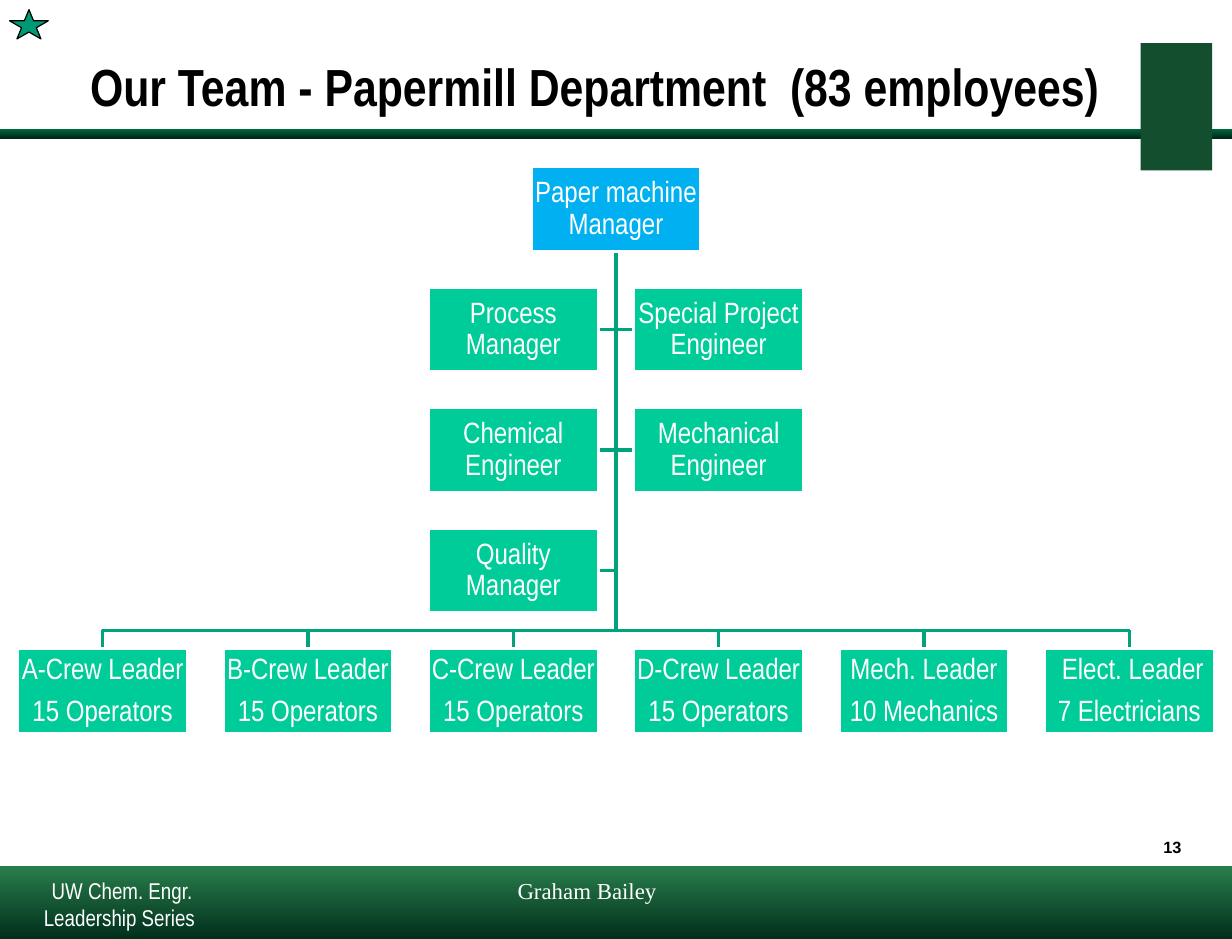
from pptx import Presentation
from pptx import util as u
from pptx.dml.color import RGBColor
from pptx.enum import shapes, text

# Content
TITLE = "Our Team - Papermill Department  (83 employees)"
HEAD = ["Paper machine Manager"]
STAFF = [
    ["Process Manager"], ["Special Project Engineer"],
    ["Chemical Engineer"], ["Mechanical Engineer"],
    ["Quality Manager"],
]
CREWS = [
    ["A-Crew Leader", "15 Operators"],
    ["B-Crew Leader", "15 Operators"],
    ["C-Crew Leader", "15 Operators"],
    ["D-Crew Leader", "15 Operators"],
    ["Mech. Leader", "10 Mechanics"],
    [" Elect. Leader", "7 Electricians"],
]

# Formats
WHITE, BLACK, TEAL, GREEN, BLUE = "FFFFFF", "000000", "00A37B", "00CC99", "00B0F0"
BOX = {"name": "Arial Narrow", "size": u.Pt(18), "color": WHITE}
HEADING = {"name": "Arial Narrow", "size": u.Pt(32), "bold": True, "color": BLACK}
SERIES = {"name": "Arial Narrow", "size": u.Pt(14), "color": WHITE}
AUTHOR = {"name": "Times New Roman", "size": u.Pt(14), "color": WHITE}
NUMBER = {"name": "Arial", "size": u.Pt(10), "bold": True, "color": BLACK}

# Chart grid, in points
WIDE, HIGH = 104.2, 52.1
LEFT, TOP = 10.9, 102.1
STEP, DROP = 126, 73.95
MID = 378

KIND = shapes.MSO_SHAPE
ALIGN = text.PP_ALIGN

prs = Presentation()
prs.slide_width, prs.slide_height = u.Pt(756), u.Pt(576)
slide = prs.slides.add_slide(prs.slide_layouts[6])


def rgb(code):
    return RGBColor.from_string(code)


def write(frame, lines, fmt, align, space=1.0):
    frame.word_wrap = True
    for i, line in enumerate(lines):
        para = frame.paragraphs[0] if i == 0 else frame.add_paragraph()
        para.alignment, para.line_spacing = align, space
        if i:
            para.space_before = u.Pt(6.5)
        run = para.add_run()
        run.text = line
        for key, val in fmt.items():
            if key == "color":
                run.font.color.rgb = rgb(val)
            else:
                setattr(run.font, key, val)


def shape(kind, at, fill, line=None, width=2):
    item = slide.shapes.add_shape(kind, *map(u.Pt, at))
    item.shadow.inherit = False
    if isinstance(fill, tuple):
        item.fill.gradient()
        item.fill.gradient_angle = 270
        for stop, code, pos in zip(item.fill.gradient_stops, fill, (0, 1)):
            stop.color.rgb, stop.position = rgb(code), pos
    else:
        item.fill.solid()
        item.fill.fore_color.rgb = rgb(fill)
    if line:
        item.line.color.rgb, item.line.width = rgb(line), u.Pt(width)
    else:
        item.line.fill.background()
    return item


def label(at, words, fmt, align, space=1.0):
    frame = slide.shapes.add_textbox(*map(u.Pt, at)).text_frame
    write(frame, [words], fmt, align, space)
    return frame


def box(x, y, lines, fill=GREEN):
    item = shape(KIND.RECTANGLE, (x, y, WIDE, HIGH), fill, WHITE)
    frame = item.text_frame
    for side in ("left", "top", "right", "bottom"):
        setattr(frame, "margin_" + side, u.Pt(0.7))
    frame.vertical_anchor = text.MSO_ANCHOR.MIDDLE
    write(frame, lines, BOX, ALIGN.CENTER, 0.9)


def elbow(*turns):
    """Draw a bent line from below the manager through the turns."""
    pen = slide.shapes.build_freeform(u.Pt(MID), u.Pt(TOP + HIGH))
    pen.add_line_segments([(u.Pt(x), u.Pt(y)) for x, y in turns], close=False)
    item = pen.convert_to_shape()
    item.shadow.inherit = False
    item.fill.background()
    item.line.color.rgb, item.line.width = rgb(TEAL), u.Pt(2)


# Bands and title
shape(KIND.RECTANGLE, (0, 531.4, 756, 44.6), ("297D4B", "002F1C"))
shape(KIND.RECTANGLE, (0, 79.2, 756, 5.8), ("00673E", "002617"))
shape(KIND.RECTANGLE, (700, 26.4, 43.8, 78.2), "134F2E")
label((282.2, 534.2, 156.2, 36), "Graham Bailey", AUTHOR, ALIGN.CENTER)
frame = label((48.2, 21.6, 642.2, 68.4), TITLE, HEADING, ALIGN.LEFT, 0.8)
frame.vertical_anchor = text.MSO_ANCHOR.MIDDLE

# Places: staff in pairs beside the trunk, crews in one row
pairs = [(LEFT + (2 + i % 2) * STEP, TOP + (i // 2 + 1) * DROP)
         for i in range(len(STAFF))]
base = TOP + 4 * DROP
row = [(LEFT + i * STEP, base) for i in range(len(CREWS))]

# Lines, behind the boxes
for x, y in reversed(pairs):
    mid = y + HIGH / 2
    elbow((MID, mid), (x if x > MID else x + WIDE, mid))
bus = base - (DROP - HIGH) / 2
for x, y in reversed(row):
    mid = x + WIDE / 2
    elbow((MID, bus), (mid, bus), (mid, y))

# Boxes
box(MID - WIDE / 2, TOP, HEAD, BLUE)
for (x, y), lines in zip(row + pairs, CREWS + STAFF):
    box(x, y, lines)

# Footer and star
label((0, 534.2, 149.8, 36), "UW Chem. Engr. Leadership Series ", SERIES, ALIGN.CENTER)
label((684, 509.8, 48, 30.2), "13", NUMBER, ALIGN.RIGHT)
shape(KIND.STAR_5_POINT, (5.9, 5.9, 23.8, 18), "009973", BLACK, 0.75)

prs.save("out.pptx")
